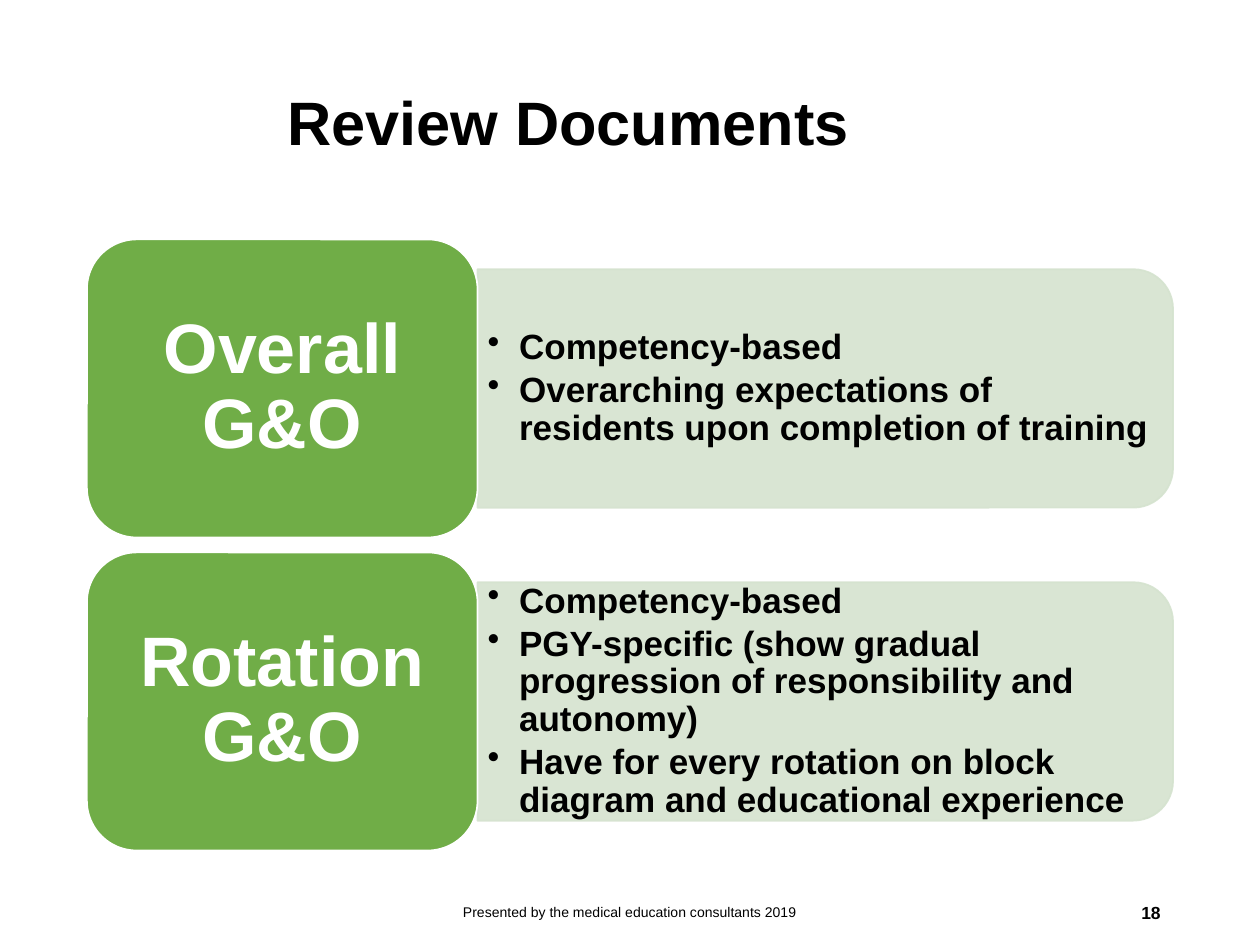
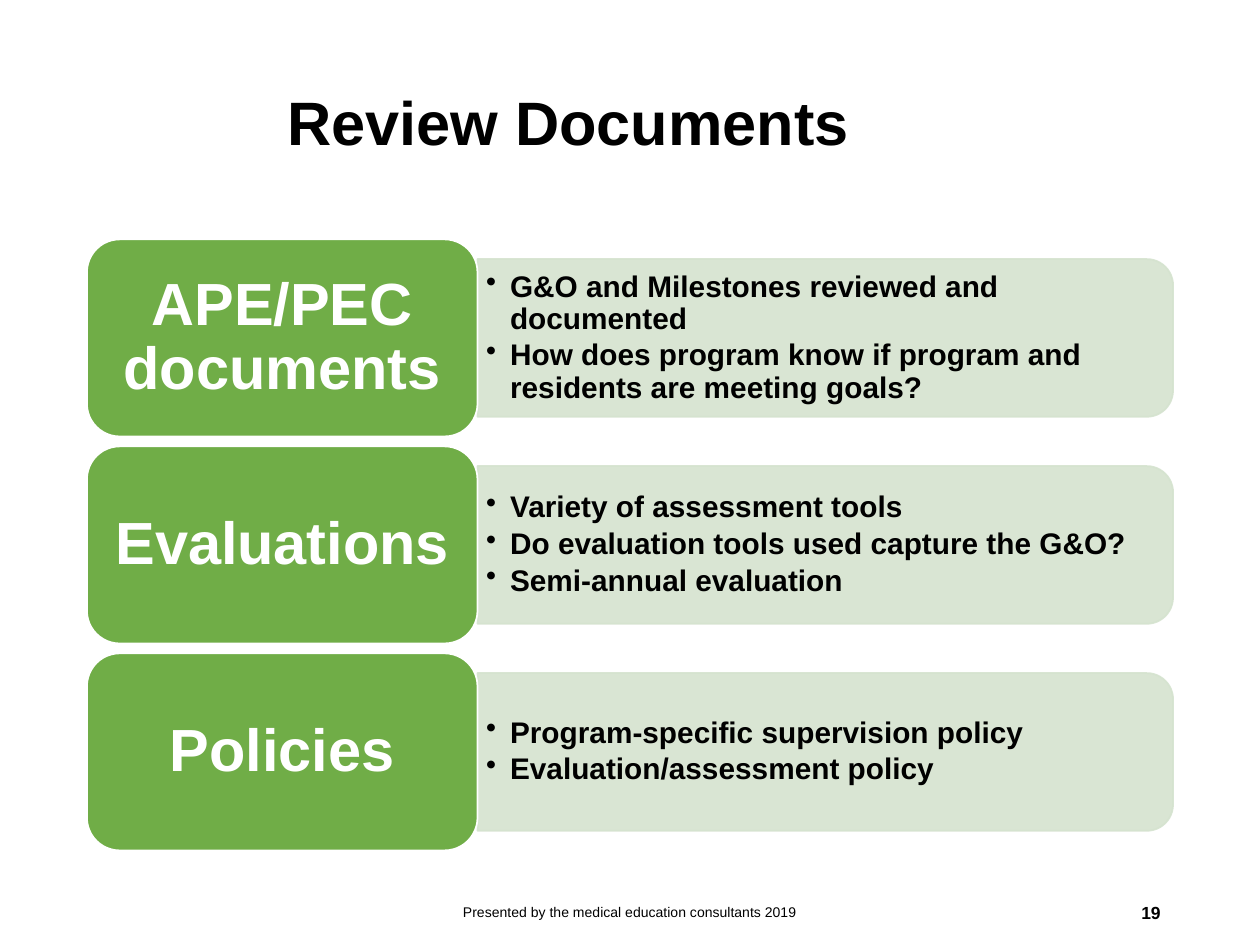
from dataclasses import dataclass

from lxml import etree
from pptx import Presentation
from pptx import util as u
from pptx.dml.color import RGBColor
from pptx.enum import shapes, text
from pptx.oxml.ns import qn


@dataclass(frozen=True)
class Theme:
    font: str = "Arial"
    ink: str = "000000"
    paper: str = "FFFFFF"
    green: str = "70AD47"
    pale: str = "D5E3CF"
    opaque: int = 90
    title: int = 35
    foot: int = 8
    page: int = 10


@dataclass(frozen=True)
class Row:
    label: str
    points: tuple[str, ...]


@dataclass(frozen=True)
class Page:
    number: int
    label_size: int
    point_size: int
    indent: float
    rows: tuple[Row, ...]


@dataclass(frozen=True)
class Box:
    left: float
    top: float
    width: float
    height: float

    def lengths(self) -> list[u.Length]:
        return [u.Inches(n) for n in (self.left, self.top, self.width, self.height)]

    def inset(self, pad: float) -> "Box":
        return Box(self.left, self.top + pad, self.width - pad, self.height - 2 * pad)


THEME = Theme()
TITLE = "Review Documents"
FOOTER = "Presented by the medical education consultants 2019"
LEFT, TOP, HEIGHT = 0.69, 1.9, 4.85
LABEL_WIDTH, BAND_WIDTH = 3.1, 5.52
GAP_SHARE, BAND_SHARE, CORNER_SHARE = 0.05, 0.8, 0.05
LEFT_ALIGN, CENTER, RIGHT = text.PP_ALIGN.LEFT, text.PP_ALIGN.CENTER, text.PP_ALIGN.RIGHT

PAGES = (
    Page(18, 40, 20, 0.25, (
        Row("Overall G&O", (
            "Competency-based",
            "Overarching expectations of residents upon completion of training",
        )),
        Row("Rotation G&O", (
            "Competency-based",
            "PGY-specific (show gradual progression of responsibility and autonomy)",
            "Have for every rotation on block diagram and educational experience",
        )),
    )),
    Page(19, 34, 17, 0.19, (
        Row("APE/PEC documents", (
            "G&O and Milestones reviewed and documented",
            "How does program know if program and residents are meeting goals?",
        )),
        Row("Evaluations", (
            "Variety of assessment tools",
            "Do evaluation tools used capture the G&O?",
            "Semi-annual evaluation",
        )),
        Row("Policies", (
            "Program-specific supervision policy",
            "Evaluation/assessment policy",
        )),
    )),
)


def add_bullet(para, indent: float) -> None:
    props = para._p.get_or_add_pPr()
    props.set("lvl", "1")
    props.set("marL", str(u.Inches(indent)))
    props.set("indent", str(-u.Inches(indent)))
    etree.SubElement(props, qn("a:buChar"), char="•")


def write(shape, lines: tuple[str, ...], size: int, color: str = THEME.ink,
          align=LEFT_ALIGN, bold: bool = True, spacing: float = 0.9,
          margin: float = 0.1, indent: float = 0) -> None:
    frame = shape.text_frame
    frame.word_wrap = True
    frame.vertical_anchor = text.MSO_ANCHOR.MIDDLE
    frame.margin_left = frame.margin_right = u.Inches(margin)
    frame.margin_top = frame.margin_bottom = u.Inches(margin / 2)
    for index, line in enumerate(lines):
        para = frame.add_paragraph() if index else frame.paragraphs[0]
        para.text = line
        para.alignment = align
        para.line_spacing = spacing
        if indent:
            para.space_after = u.Pt(size * 0.15)
            add_bullet(para, indent)
        font = para.font
        font.name, font.size, font.bold = THEME.font, u.Pt(size), bold
        font.color.rgb = RGBColor.from_string(color)


def add_box(slide, box: Box, lines: tuple[str, ...], size: int, **style) -> None:
    write(slide.shapes.add_textbox(*box.lengths()), lines, size, **style)


def add_block(slide, kind, box: Box, fill: str, line: str):
    block = slide.shapes.add_shape(kind, *box.lengths())
    block.shadow.inherit = False
    block.fill.solid()
    block.fill.fore_color.rgb = RGBColor.from_string(fill)
    block.line.color.rgb = RGBColor.from_string(line)
    block.line.width = u.Pt(1)
    return block


def add_band(slide, box: Box) -> None:
    shift = (box.width - box.height) / 2
    upright = Box(box.left + shift, box.top - shift, box.height, box.width)
    band = add_block(slide, shapes.MSO_SHAPE.ROUND_2_SAME_RECTANGLE, upright,
                     THEME.pale, THEME.pale)
    band.rotation = 90
    for color in band._element.spPr.iter(qn("a:srgbClr")):
        etree.SubElement(color, qn("a:alpha"), val=str(THEME.opaque * 1000))


def add_row(slide, row: Row, page: Page, top: float, height: float) -> None:
    tall = height * BAND_SHARE
    band = Box(LEFT + LABEL_WIDTH, top + (height - tall) / 2, BAND_WIDTH, tall)
    add_band(slide, band)
    add_box(slide, band.inset(tall * CORNER_SHARE), row.points, page.point_size,
            margin=page.point_size / 250, indent=page.indent)
    label = add_block(slide, shapes.MSO_SHAPE.ROUNDED_RECTANGLE,
                      Box(LEFT, top, LABEL_WIDTH, height), THEME.green, THEME.paper)
    write(label, (row.label,), page.label_size, color=THEME.paper, align=CENTER,
          margin=page.label_size / 240)


def add_page(deck, page: Page) -> None:
    slide = deck.slides.add_slide(deck.slide_layouts[6])
    count = len(page.rows)
    height = HEIGHT / (count + (count - 1) * GAP_SHARE)
    for index, row in enumerate(page.rows):
        add_row(slide, row, page, TOP + index * height * (1 + GAP_SHARE), height)
    add_box(slide, Box(2.18, 0.27, 7.14, 1.45), (TITLE,), THEME.title)
    add_box(slide, Box(3.31, 7.04, 3.38, 0.4), (FOOTER,), THEME.foot,
            align=CENTER, bold=False, spacing=1.0)
    add_box(slide, Box(7.06, 7.04, 2.25, 0.4), (str(page.number),), THEME.page,
            align=RIGHT, spacing=1.0)


def main() -> None:
    deck = Presentation()
    deck.slide_width, deck.slide_height = u.Inches(10), u.Inches(7.5)
    for page in PAGES:
        add_page(deck, page)
    deck.save("out.pptx")


if __name__ == "__main__":
    main()
